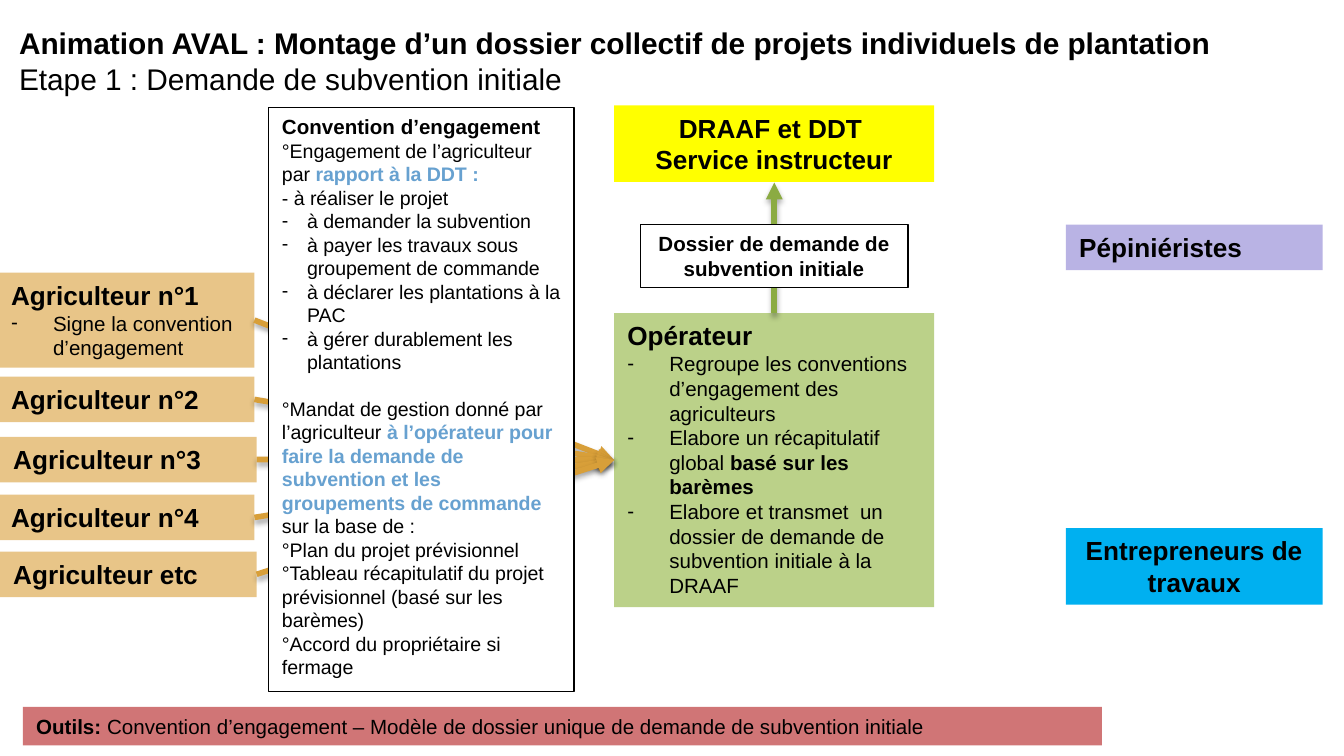
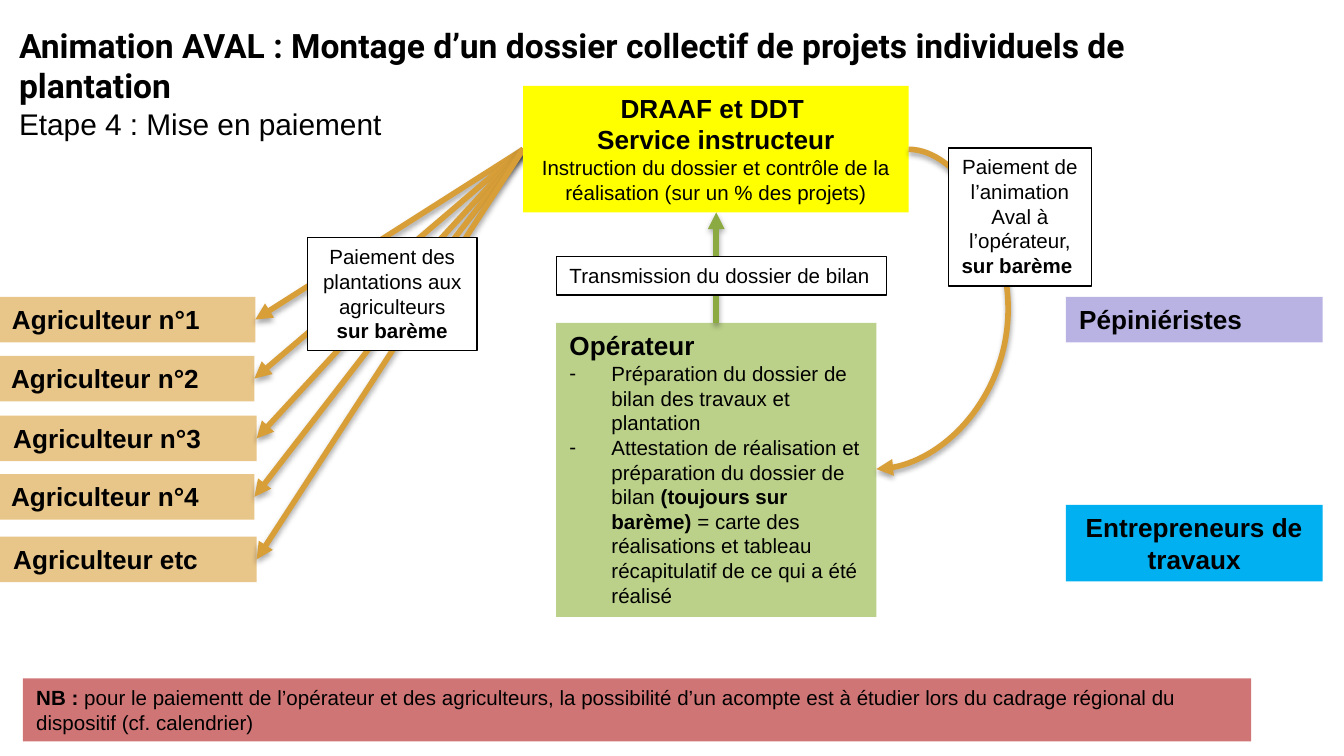
from dataclasses import dataclass

from lxml.etree import SubElement
from pptx import Presentation
from pptx.dml.color import RGBColor
from pptx.enum.shapes import MSO_CONNECTOR, MSO_SHAPE
from pptx.enum.text import MSO_ANCHOR, MSO_AUTO_SIZE, PP_ALIGN
from pptx.oxml.ns import qn
from pptx.util import Pt

BLACK, WHITE = "000000", "FFFFFF"
SAND, GREEN, YELLOW = "E8C588", "BBD189", "FFFF00"
LILAC, BLUE, ROSE = "B9B3E4", "00B0F0", "D07576"
ORANGE, MOSS, SKY = "D89F39", "8BAB42", "67A1D0"
FONT = "Arial"
HEAD, BODY, SMALL = 14, 11, 10.5
ROW_W, ROW_H = 137.5, 24.4
SIDE_X = 571
THEME = "Animation AVAL : Montage d’un dossier collectif de projets individuels de plantation"


@dataclass
class Line:
    """A paragraph; text between asterisks is bold and takes the tint."""
    text: str
    size: float = BODY
    dash: float = 0
    tint: str = BLACK
    gap: float = 0


def color(code):
    return RGBColor.from_string(code)


def style(run, size, bold=False, tint=BLACK, face=FONT):
    font = run.font
    font.name, font.size, font.bold = face, Pt(size), bold
    font.color.rgb = color(tint)


def bullet(par, indent):
    props = par._p.get_or_add_pPr()
    props.set("marL", str(Pt(indent)))
    props.set("indent", str(-Pt(indent)))
    tint = SubElement(props, qn("a:buClr"))
    SubElement(tint, qn("a:srgbClr"), val=BLACK)
    SubElement(props, qn("a:buFont"), typeface=FONT)
    SubElement(props, qn("a:buChar"), char="-")


def write(par, line, align):
    par.alignment = align
    par.space_before = Pt(line.gap)
    if line.dash:
        bullet(par, line.dash)
    for i, part in enumerate(line.text.split("*")):
        if part:
            run = par.add_run()
            run.text = part
            bold = i % 2 == 1
            style(run, line.size, bold, line.tint if bold else BLACK)


def box(slide, x, y, w, h, fill, lines, center=False, wrap=True):
    shape = slide.shapes.add_shape(MSO_SHAPE.RECTANGLE, Pt(x), Pt(y), Pt(w), Pt(h))
    shape.shadow.inherit = False
    shape.fill.solid()
    shape.fill.fore_color.rgb = color(fill)
    if fill == WHITE:
        shape.line.color.rgb = color(BLACK)
        shape.line.width = Pt(0.75)
    else:
        shape.line.fill.background()
    frame = shape.text_frame
    frame.word_wrap = wrap
    frame.auto_size = MSO_AUTO_SIZE.SHAPE_TO_FIT_TEXT
    frame.vertical_anchor = MSO_ANCHOR.TOP
    align = PP_ALIGN.CENTER if center else PP_ALIGN.LEFT
    for i, line in enumerate(lines):
        par = frame.add_paragraph() if i else frame.paragraphs[0]
        write(par, line, align)


def arrow(slide, start, end, tint=ORANGE, bend=None):
    """Draw an arrow, curved when bend gives its adjustment."""
    kind = MSO_CONNECTOR.STRAIGHT if bend is None else MSO_CONNECTOR.CURVE
    link = slide.shapes.add_connector(kind, *[Pt(v) for v in (*start, *end)])
    link.line.color.rgb = color(tint)
    link.line.width = Pt(3)
    SubElement(link.line._get_or_add_ln(), qn("a:tailEnd"), type="triangle")
    props = link._element.spPr
    if bend is not None:
        guides = props.find(qn("a:prstGeom")).find(qn("a:avLst"))
        SubElement(guides, qn("a:gd"), name="adj1", fmla=f"val {bend}")
    effects = SubElement(props, qn("a:effectLst"))
    shadow = SubElement(effects, qn("a:outerShdw"), blurRad=str(Pt(3.1)),
                        dist=str(Pt(1.8)), dir="5400000", rotWithShape="0")
    shade = SubElement(shadow, qn("a:srgbClr"), val=BLACK)
    SubElement(shade, qn("a:alpha"), val="35000")


def title(slide, step, w, h, size, face):
    shape = slide.shapes.title
    shape.left, shape.top, shape.width, shape.height = Pt(3), Pt(6), Pt(w), Pt(h)
    frame = shape.text_frame
    frame.word_wrap = True
    frame.auto_size = MSO_AUTO_SIZE.NONE
    frame.vertical_anchor = MSO_ANCHOR.TOP
    frame.margin_left = frame.margin_right = Pt(7.2)
    frame.margin_top = frame.margin_bottom = Pt(7.2)
    par = frame.paragraphs[0]
    par.text = f"{THEME}\v{step}"
    par.alignment = PP_ALIGN.LEFT
    first, last = par.runs
    style(first, size, True, face=face)
    style(last, 16)


def farmers(slide, spots, task=None):
    """Draw the farmers' boxes and return the middle of each right edge."""
    ports = []
    names = ["n°1", "n°2", "n°3", "n°4", "etc"]
    for i, (name, (x, y)) in enumerate(zip(names, spots)):
        lines, h = [Line(f"*Agriculteur {name}*", HEAD)], ROW_H
        if task and i == 0:
            lines.append(Line(task, dash=22.5))
            h = 51
        box(slide, x, y, ROW_W, h, SAND, lines)
        ports.append((x + ROW_W, y + h / 2))
    return ports


def office(slide, x, y, w, h, more=()):
    names = ["*DRAAF et DDT *", "*Service instructeur*"]
    lines = [Line(name, HEAD) for name in names]
    box(slide, x, y, w, h, YELLOW, [*lines, *more], center=True)


def agent(slide, x, y, tasks):
    lines = [Line(task, dash=22.5) for task in tasks]
    box(slide, x, y, 171.5, 157.5, GREEN, [Line("*Opérateur*", HEAD), *lines])


def trades(slide, top, low):
    box(slide, SIDE_X, top, ROW_W, ROW_H, LILAC, [Line("*Pépiniéristes*", HEAD)])
    box(slide, SIDE_X, low, ROW_W, 41, BLUE,
        [Line("*Entrepreneurs de travaux*", HEAD)], center=True)


def pact(slide):
    plain = ["°Plan du projet prévisionnel",
             "°Tableau récapitulatif du projet prévisionnel (basé sur les barèmes)",
             "°Accord du propriétaire si fermage"]
    duties = ["à demander la subvention",
              "à payer les travaux sous groupement de commande",
              "à déclarer les plantations à la PAC",
              "à gérer durablement les plantations"]
    lines = [
        Line("*Convention d’engagement*"),
        Line("°Engagement de l’agriculteur par *rapport à la DDT :*", SMALL, tint=SKY),
        Line("- à réaliser le projet", SMALL),
        *[Line(duty, SMALL, dash=13.5) for duty in duties],
        Line("°Mandat de gestion donné par l’agriculteur *à l’opérateur pour faire "
             "la demande de subvention et les groupements de commande *"
             "sur la base de :", SMALL, tint=SKY, gap=12.5),
        *[Line(text, SMALL) for text in plain],
    ]
    box(slide, 144, 57.5, 163.5, 313, WHITE, lines)


def request(slide):
    title(slide, "Etape 1 : Demande de subvention initiale", 668, 59, 16, FONT)
    spots = [(-1.2, 146), (-1.2, 201.8), (0, 234), (-1.2, 265), (0, 295.5)]
    ports = farmers(slide, spots, "Signe la convention d’engagement")
    agent(slide, 329, 167.8, [
        "Regroupe les conventions d’engagement des agriculteurs",
        "Elabore un récapitulatif global *basé sur les barèmes*",
        "Elabore et transmet  un dossier de demande de subvention initiale à la DRAAF"])
    trades(slide, 120.3, 283)
    office(slide, 329, 56.5, 171.5, 41)
    for port in ports:
        arrow(slide, port, (329, 246.5))
    arrow(slide, (414.8, 167.8), (414.8, 97.8), MOSS)
    box(slide, 12.3, 378.7, 578, 20.6, ROSE,
        [Line("*Outils: *Convention d’engagement – Modèle de dossier unique "
              "de demande de subvention initiale")])
    box(slide, 343, 120.3, 143.5, 33.8, WHITE,
        [Line("*Dossier de demande de subvention initiale*")], center=True)
    pact(slide)


def payment(slide):
    title(slide, "Etape 4 : Mise en paiement", 677, 36, 18, "Roboto")
    spots = [(-0.7, 159), (-1.2, 190.6), (0, 222.7), (-1.2, 254), (0, 287.5)]
    ports = farmers(slide, spots)
    agent(slide, 298, 173, [
        "Préparation du dossier de bilan des travaux et plantation",
        "Attestation de réalisation et préparation du dossier de bilan "
        "*(toujours sur barème) *= carte des réalisations et tableau "
        "récapitulatif de ce qui a été réalisé"])
    trades(slide, 159, 270.5)
    arrow(slide, (383.7, 173), (383.7, 113.8), MOSS)
    box(slide, 298, 137.5, 177, 20.6, WHITE,
        [Line("Transmission du dossier de bilan")], wrap=False)
    for port in ports:
        arrow(slide, (280.3, 80), port)
    box(slide, 164.7, 127.3, 91, 60.5, WHITE,
        [Line("Paiement des plantations aux agriculteurs"), Line("*sur barème*")],
        center=True)
    office(slide, 280.3, 46, 206.5, 67.8, [
        Line("Instruction du dossier et contrôle de la réalisation "
             "(sur un % des projets)")])
    arrow(slide, (486.8, 80), (469.5, 251.3), bend=-308500)
    box(slide, 508, 79.2, 76.8, 74, WHITE,
        [Line("Paiement de l’animation Aval à l’opérateur, *sur barème *")],
        center=True)
    box(slide, 12.3, 363.5, 658, 33.8, ROSE,
        [Line("*NB :* pour le paiementt de l’opérateur et des agriculteurs, la "
              "possibilité d’un acompte est à étudier lors du cadrage régional "
              "du dispositif (cf. calendrier)")])


def main():
    deck = Presentation()
    deck.slide_width, deck.slide_height = Pt(720), Pt(405)
    for draw in (request, payment):
        draw(deck.slides.add_slide(deck.slide_layouts[5]))
    deck.save("out.pptx")


if __name__ == "__main__":
    main()
